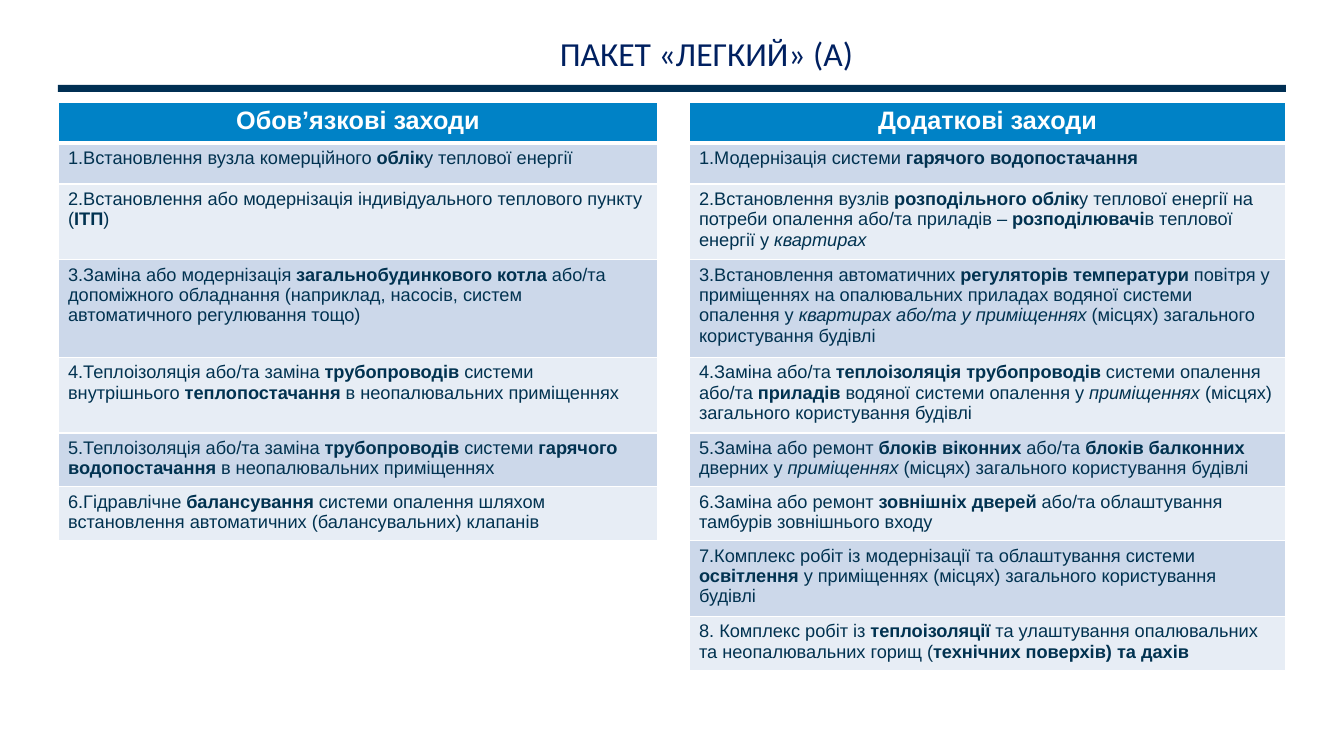
from lxml import etree
from pptx import Presentation
from pptx import util as u
from pptx.dml import color
from pptx.enum import shapes, text
from pptx.oxml import ns

PX = 914400 / 100.8
NAVY, TITLE_BLUE, HEADER_BLUE, INK = "002F53", "002060", "0082C6", "013250"
WHITE, BANDS = "FFFFFF", ("CCD8EA", "E7EDF5")

# *...* marks bold, _..._ marks italic
REQUIRED = [
    "*Обов’язкові заходи*",
    "1.Встановлення вузла комерційного *облік*у теплової енергії",
    "2.Встановлення або модернізація індивідуального теплового пункту (*ІТП*)",
    "3.Заміна або модернізація *загальнобудинкового котла *або/та допоміжного обладнання "
    "(наприклад, насосів, систем автоматичного регулювання тощо)",
    "4.Теплоізоляція або/та заміна *трубопроводів* системи внутрішнього *теплопостачання* "
    "в неопалювальних приміщеннях",
    "5.Теплоізоляція або/та заміна *трубопроводів* системи *гарячого водопостачання *"
    "в неопалювальних приміщеннях",
    "6.Гідравлічне *балансування* системи опалення шляхом встановлення автоматичних "
    "(балансувальних) клапанів",
]
ADDITIONAL = [
    "*Додаткові заходи*",
    "1.Модернізація системи *гарячого водопостачання*",
    "2.Встановлення вузлів *розподільного облік*у теплової енергії на потреби опалення "
    "або/та приладів – *розподілювачі*в теплової енергії у _квартирах_",
    "3.Встановлення автоматичних *регуляторів температури *повітря у приміщеннях на "
    "опалювальних приладах водяної системи опалення у _квартирах або/та у приміщеннях _"
    "(місцях) загального користування будівлі",
    "4.Заміна або/та *теплоізоляція трубопроводів *системи опалення або/та *приладів* "
    "водяної системи опалення у _приміщеннях_ (місцях) загального користування будівлі",
    "5.Заміна або ремонт *блоків віконних *або/та *блоків балконних *дверних у "
    "_приміщеннях_ (місцях) загального користування будівлі",
    "6.Заміна або ремонт *зовнішніх дверей *або/та облаштування тамбурів зовнішнього входу",
    "7.Комплекс робіт із модернізації та облаштування системи *освітлення* у приміщеннях "
    "(місцях) загального користування будівлі",
    "8. Комплекс робіт із *теплоізоляції *та улаштування опалювальних та неопалювальних "
    "горищ (*технічних поверхів) та дахів*",
]


def rgb(value):
    return color.RGBColor.from_string(value)


def write(paragraph, marked, ink, **font_format):
    for b, bold_part in enumerate(marked.split("*")):
        for i, part in enumerate(bold_part.split("_")):
            if part:
                run = paragraph.add_run()
                run.text = part
                run.font.color.rgb = rgb(ink)
                for key, value in {"bold": b % 2 == 1, "italic": i % 2 == 1, **font_format}.items():
                    setattr(run.font, key, value)


prs = Presentation()
prs.slide_width, prs.slide_height = round(1344 * PX), round(756 * PX)
slide = prs.slides.add_slide(prs.slide_layouts[6])

# Title
title = slide.shapes.add_textbox(*(round(n * PX) for n in (218, 33, 977, 70))).text_frame
title.word_wrap = True
heading = title.paragraphs[0]
heading.alignment = text.PP_ALIGN.CENTER
heading.line_spacing = 0.9
write(heading, "ПАКЕТ «ЛЕГКИЙ» (А)", TITLE_BLUE, size=u.Pt(24), name="Calibri")

# Rule under the title
rule = slide.shapes.add_shape(shapes.MSO_SHAPE.RECTANGLE,
                              *(round(n * PX) for n in (58, 85, 1228, 7)))
rule.shadow.inherit = False
rule.fill.solid()
rule.fill.fore_color.rgb = rgb(NAVY)
rule.line.fill.background()

# Table of measures, with an empty middle column as a gap
row_count, row_height = len(ADDITIONAL), 41
measures = slide.shapes.add_table(
    row_count, 3, *(round(n * PX) for n in (58, 102, 1228, row_height * row_count))).table
measures.first_row = measures.horz_banding = False
for column, width in zip(measures.columns, (600, 31, 597)):
    column.width = round(width * PX)
for row in measures.rows:
    row.height = round(row_height * PX)

for c, entries in enumerate((REQUIRED, [], ADDITIONAL)):
    for r in range(row_count):
        cell = measures.cell(r, c)

        # White borders, thicker under the header
        properties = cell._tc.get_or_add_tcPr()
        borders = {"L": 1, "R": 1, "T": 3 if r == 1 else 1, "B": 3 if r == 0 else 1}
        for side, points in borders.items():
            border = etree.SubElement(properties, ns.qn(f"a:ln{side}"), w=str(u.Pt(points)))
            paint = etree.SubElement(border, ns.qn("a:solidFill"))
            etree.SubElement(paint, ns.qn("a:srgbClr"), val=WHITE)

        # Fill and text
        fill = WHITE
        if r < len(entries):
            fill = HEADER_BLUE if r == 0 else BANDS[(r - 1) % 2]
            line = cell.text_frame.paragraphs[0]
            line.alignment = text.PP_ALIGN.CENTER if r == 0 else text.PP_ALIGN.LEFT
            write(line, entries[r], WHITE if r == 0 else INK,
                  size=u.Pt(18 if r == 0 else 13), name="Arial")
        cell.fill.solid()
        cell.fill.fore_color.rgb = rgb(fill)

prs.save("out.pptx")
